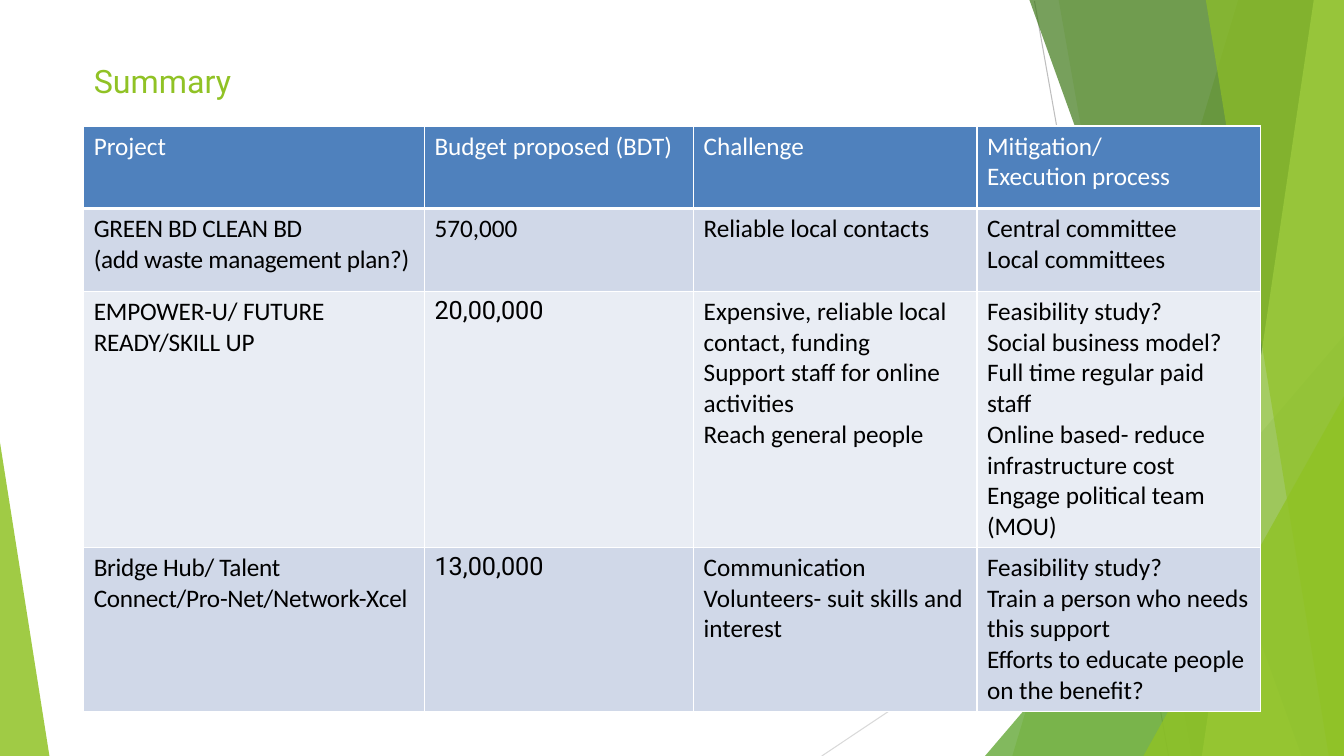
from dataclasses import dataclass

import pptx
import pptx.dml.color
import pptx.enum.shapes
import pptx.enum.text
import pptx.oxml
import pptx.oxml.ns
import pptx.util

Inches = pptx.util.Inches
Pt = pptx.util.Pt
WIDTH, HEIGHT = 13.33, 7.5
GREEN, WHITE, BLACK = "90C225", "FFFFFF", "000000"
Point = tuple[float, float]


@dataclass
class Facet:
    color: str
    opacity: int
    corners: list[Point]


@dataclass
class Ray:
    color: str
    start: Point
    end: Point


@dataclass
class Entry:
    lines: list[str]
    font: str = "Calibri"
    spacing: float = 0


@dataclass
class Band:
    height: float
    fill: str
    text_color: str
    bottom_border: float
    entries: list[Entry]


BOTTOM_RIGHT = (WIDTH, HEIGHT)
RAYS = [
    Ray("BEBEBE", (10.26, 0.01), (11.59, HEIGHT)),
    Ray("D9D9D9", (WIDTH, 4.04), (8.15, HEIGHT)),
]
FACETS = [
    Facet(GREEN, 30, [(WIDTH, 0), (12.28, 0), (10.04, HEIGHT), BOTTOM_RIGHT]),
    Facet(GREEN, 20, [(WIDTH, 0), (10.5, 0), (11.82, HEIGHT), BOTTOM_RIGHT]),
    Facet("539F20", 72, [(WIDTH, 3.33), (9.77, HEIGHT), BOTTOM_RIGHT]),
    Facet("3E7818", 70, [(WIDTH, 0), (10.21, 0), (12.91, HEIGHT), BOTTOM_RIGHT]),
    Facet("C0E374", 70, [(WIDTH, 0), (13.03, 0), (11.92, HEIGHT), BOTTOM_RIGHT]),
    Facet(GREEN, 65, [(WIDTH, 0), (11.96, 0), (13.18, HEIGHT), BOTTOM_RIGHT]),
    Facet(GREEN, 80, [(WIDTH, 3.93), (11.34, HEIGHT), BOTTOM_RIGHT]),
    Facet(GREEN, 85, [(0, 4.39), (0, HEIGHT), (0.49, HEIGHT)]),
]

COLUMN_WIDTHS = [3.38, 2.67, 2.81, 2.81]
BANDS = [
    Band(0.82, "4F81BD", WHITE, 3, [
        Entry(["Project"]),
        Entry(["Budget proposed (BDT)"]),
        Entry(["Challenge"]),
        Entry(["Mitigation/", "Execution process"]),
    ]),
    Band(0.82, "D0D8E8", BLACK, 1, [
        Entry(["GREEN BD CLEAN BD", "(add waste management plan?)"], spacing=-0.2),
        Entry(["570,000"]),
        Entry(["Reliable local contacts"]),
        Entry(["Central committee", "Local committees"]),
    ]),
    Band(2.54, "E9EDF4", BLACK, 1, [
        Entry(["EMPOWER-U/ FUTURE READY/SKILL UP"], spacing=-0.1),
        Entry(["20,00,000"], "Roboto"),
        Entry(["Expensive, reliable local contact, funding",
               "Support staff for online activities",
               "Reach general people"]),
        Entry(["Feasibility study?",
               "Social business model?",
               "Full time regular paid staff",
               "Online based- reduce infrastructure cost",
               "Engage political team (MOU)"]),
    ]),
    Band(1.63, "D0D8E8", BLACK, 1, [
        Entry(["Bridge Hub/ Talent Connect/Pro-Net/Network-Xcel"], spacing=-0.2),
        Entry(["13,00,000"], "Roboto"),
        Entry(["Communication", "Volunteers- suit skills and interest"]),
        Entry(["Feasibility study?",
               "Train a person who needs this support",
               "Efforts to educate people on the benefit?"]),
    ]),
]


def rgb(color: str) -> pptx.dml.color.RGBColor:
    return pptx.dml.color.RGBColor.from_string(color)


def paint(fill, color: str) -> None:
    fill.solid()
    fill.fore_color.rgb = rgb(color)


def apply_format(target, values: dict) -> None:
    for attribute, value in values.items():
        setattr(target, attribute, value)


def format_font(font, name: str, size: float, color: str) -> None:
    apply_format(font, {"name": name, "size": Pt(size), "bold": False})
    font.color.rgb = rgb(color)


def draw_ray(slide, ray: Ray) -> None:
    ends = [Inches(value) for value in ray.start + ray.end]
    line = slide.shapes.add_connector(
        pptx.enum.shapes.MSO_CONNECTOR.STRAIGHT, *ends)
    line.line.width = Pt(0.75)
    line.line.color.rgb = rgb(ray.color)
    properties = line.element.spPr
    pptx.oxml.ns.qn("a:effectLst")
    properties.append(properties.makeelement(pptx.oxml.ns.qn("a:effectLst")))


def draw_facet(slide, facet: Facet) -> None:
    start, *others = [(Inches(x), Inches(y)) for x, y in facet.corners]
    builder = slide.shapes.build_freeform(*start)
    builder.add_line_segments(others, close=True)
    shape = builder.convert_to_shape()
    shape.shadow.inherit = False
    shape.line.fill.background()
    paint(shape.fill, facet.color)
    color = shape.element.spPr.find(".//" + pptx.oxml.ns.qn("a:srgbClr"))
    alpha = color.makeelement(pptx.oxml.ns.qn("a:alpha"),
                              {"val": str(facet.opacity * 1000)})
    color.append(alpha)


def write_title(slide) -> None:
    title = slide.shapes.title
    apply_format(title, {"left": Inches(0.93), "top": Inches(0.61),
                         "width": Inches(11.47), "height": Inches(0.39)})
    frame = title.text_frame
    frame.text = "Summary"
    apply_format(frame, {
        "margin_left": 0, "margin_top": 0, "margin_right": 0, "margin_bottom": 0,
        "vertical_anchor": pptx.enum.text.MSO_ANCHOR.TOP,
        "auto_size": pptx.enum.text.MSO_AUTO_SIZE.SHAPE_TO_FIT_TEXT,
    })
    frame.paragraphs[0].alignment = pptx.enum.text.PP_ALIGN.LEFT
    format_font(frame.paragraphs[0].runs[0].font, "Roboto", 23, GREEN)
    title.element.getparent().append(title.element)  # in front of the facets


def add_borders(cell, bottom: float) -> None:
    properties = cell._tc.get_or_add_tcPr()
    for side, width in {"L": 1, "R": 1, "T": 1, "B": bottom}.items():
        properties.append(pptx.oxml.parse_xml(
            f'<a:ln{side} {pptx.oxml.ns.nsdecls("a")} w="{Pt(width)}"><a:solidFill>'
            f'<a:srgbClr val="{WHITE}"/></a:solidFill></a:ln{side}>'))


def fill_cell(cell, entry: Entry, band: Band) -> None:
    add_borders(cell, band.bottom_border)
    paint(cell.fill, band.fill)
    cell.text_frame.text = "\n".join(entry.lines)
    for paragraph in cell.text_frame.paragraphs:
        run = paragraph.runs[0]
        format_font(run.font, entry.font, 18, band.text_color)
        if entry.spacing:
            run.font._element.set("spc", str(round(entry.spacing * 100)))


def draw_summary(slide) -> None:
    summary = slide.shapes.add_table(
        len(BANDS), len(COLUMN_WIDTHS), Inches(0.83), Inches(1.25),
        Inches(sum(COLUMN_WIDTHS)), Inches(sum(band.height for band in BANDS))).table
    for column, width in zip(summary.columns, COLUMN_WIDTHS):
        column.width = Inches(width)
    for row, band in zip(summary.rows, BANDS):
        row.height = Inches(band.height)
        for cell, entry in zip(row.cells, band.entries):
            fill_cell(cell, entry, band)


def main() -> None:
    deck = pptx.Presentation()
    apply_format(deck, {"slide_width": Inches(WIDTH), "slide_height": Inches(HEIGHT)})
    slide = deck.slides.add_slide(deck.slide_layouts[5])
    paint(slide.background.fill, WHITE)
    # Green backdrop
    for ray in RAYS:
        draw_ray(slide, ray)
    for facet in FACETS:
        draw_facet(slide, facet)
    # Heading and project table
    write_title(slide)
    draw_summary(slide)
    deck.save("out.pptx")


if __name__ == "__main__":
    main()
